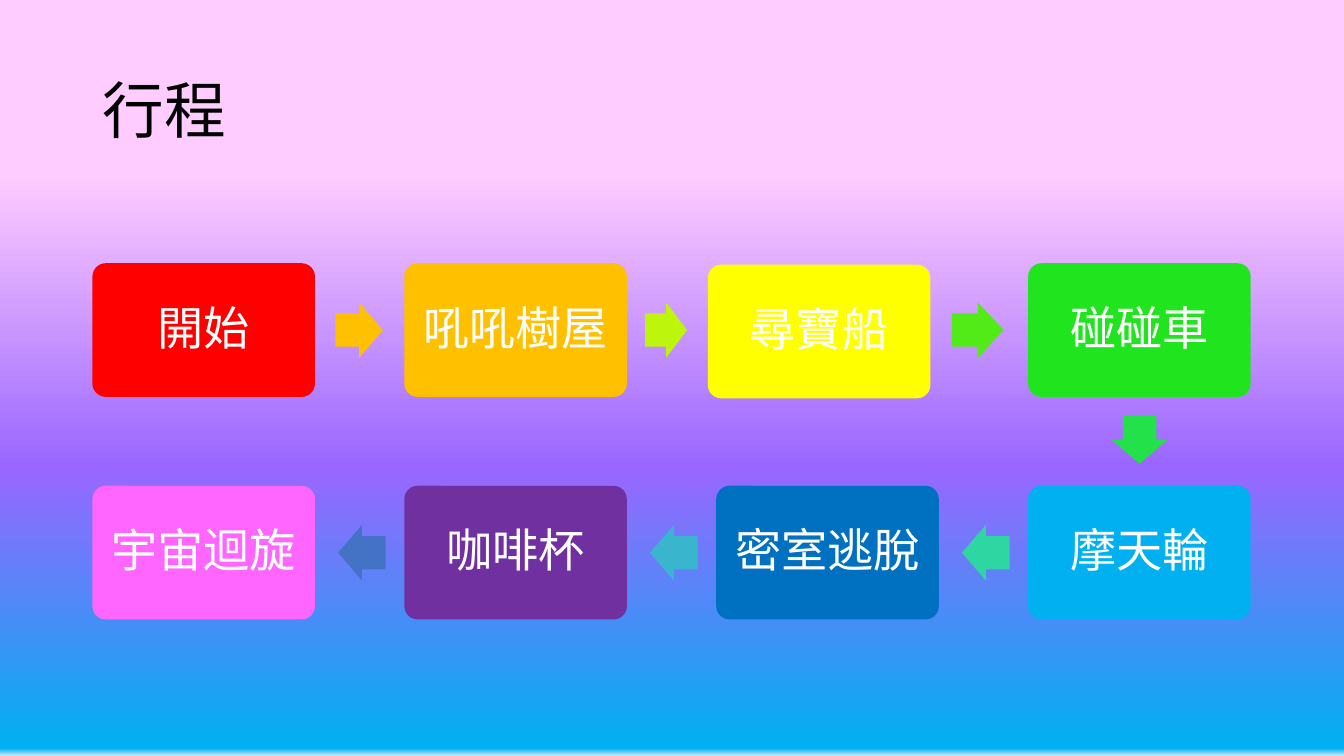
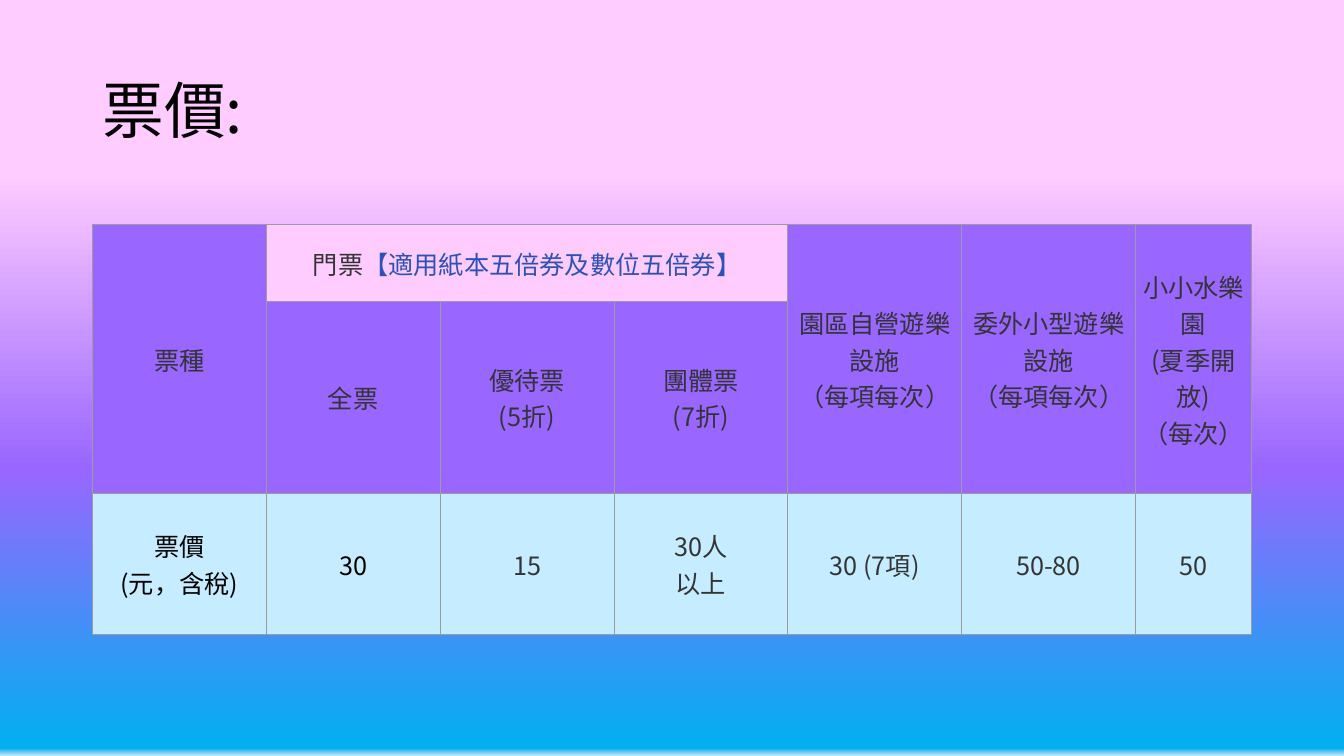
from lxml import etree
from pptx import Presentation
from pptx.dml.color import RGBColor
from pptx.enum.shapes import MSO_SHAPE as SHAPE
from pptx.enum.text import MSO_ANCHOR as ANCHOR, PP_ALIGN as ALIGN
from pptx.oxml.ns import qn
from pptx.util import Pt

FONT = "Noto Sans CJK JP"
BLACK, WHITE, GREY, BLUE = "000000", "FFFFFF", "343434", "2A52BE"
PINK, PURPLE, PALE, BORDER = "FFCCFF", "9966FF", "C5ECFF", "9C9C9C"
BACKDROP = [(23, PINK), (62, PURPLE), (99, "00B0F0"), (100, "D6E6F5")]
LEFT, WIDTH = 66, 828


def rgb(value):
    return RGBColor.from_string(value)


class Deck:
    """Holds the shared style and the current slide."""

    def __init__(self):
        self.prs = Presentation()
        self.prs.slide_width, self.prs.slide_height = Pt(960), Pt(540)
        self.slide = None
        self.backdrop()

    def backdrop(self):
        master = self.prs.slide_master
        fill = master.background.fill
        fill.gradient()
        fill.gradient_angle = 270
        stops = next(master.element.iter(qn("a:gsLst")))
        for gs in list(stops):
            stops.remove(gs)
        for percent, color in BACKDROP:
            gs = etree.SubElement(stops, qn("a:gs"), pos=str(percent * 1000))
            etree.SubElement(gs, qn("a:srgbClr"), val=color)

    def style(self, p, size, color, align=ALIGN.CENTER, spacing=None):
        p.alignment = align
        p.line_spacing = spacing
        for r in p.runs:
            r.font.name, r.font.size, r.font.bold = FONT, Pt(size), False
            r.font.color.rgb = rgb(color)
            etree.SubElement(r.font._element, qn("a:ea"), typeface=FONT)

    def new_slide(self, title):
        self.slide = self.prs.slides.add_slide(self.prs.slide_layouts[5])
        sp = self.slide.shapes.title
        sp.left, sp.top, sp.width, sp.height = Pt(LEFT), Pt(28.75), Pt(WIDTH), Pt(104.4)
        tf = sp.text_frame
        tf.text = title
        tf.vertical_anchor = ANCHOR.MIDDLE
        self.style(tf.paragraphs[0], 44, BLACK, ALIGN.LEFT, 0.9)

    def shape(self, kind, x, y, w, h, color, adjustments):
        sp = self.slide.shapes.add_shape(kind, Pt(x), Pt(y), Pt(w), Pt(h))
        sp.shadow.inherit = False
        sp.fill.solid()
        sp.fill.fore_color.rgb = rgb(color)
        sp.line.fill.background()
        for i, value in enumerate(adjustments):
            sp.adjustments[i] = value
        return sp

    def box(self, text, x, y, w, h, color):
        sp = self.shape(SHAPE.ROUNDED_RECTANGLE, x, y, w, h, color, [0.1])
        tf = sp.text_frame
        tf.text = text
        tf.word_wrap = False
        tf.vertical_anchor = ANCHOR.MIDDLE
        self.style(tf.paragraphs[0], 33, WHITE, spacing=0.9)

    def arrow(self, x, y, w, color, rotation=0):
        sp = self.shape(SHAPE.RIGHT_ARROW, x, y, w, 39.6, color, [0.6, 0.5])
        sp.rotation = rotation

    def table(self, x, y, widths, heights):
        frame = self.slide.shapes.add_table(len(heights), len(widths), Pt(x), Pt(y),
                                            Pt(sum(widths)), Pt(sum(heights)))
        table = frame.table
        table.first_row = table.horz_banding = False
        for column, width in zip(table.columns, widths):
            column.width = Pt(width)
        for row, height in zip(table.rows, heights):
            row.height = Pt(height)
        return table

    def cell(self, cell, text, fill, color):
        cell.text = text
        cell.vertical_anchor = ANCHOR.MIDDLE
        cell.margin_left = cell.margin_right = Pt(2.25)
        cell.margin_top = cell.margin_bottom = Pt(2.25)
        for p in cell.text_frame.paragraphs:
            self.style(p, 18, color)
        # Borders come before the fill in the cell properties
        tcPr = cell._tc.get_or_add_tcPr()
        for side in ("a:lnL", "a:lnR", "a:lnT", "a:lnB"):
            ln = etree.SubElement(tcPr, qn(side), w=str(Pt(0.75)))
            solid = etree.SubElement(ln, qn("a:solidFill"))
            etree.SubElement(solid, qn("a:srgbClr"), val=BORDER)
        cell.fill.solid()
        cell.fill.fore_color.rgb = rgb(fill)


def route_slide(deck):
    deck.new_slide("行程")
    box_w, box_h, pitch = 159, 95.5, 222.8
    top, bottom = 188, 347

    # Stops: the upper row runs right, the lower row runs back left
    stops = [("開始", "FF0000"), ("吼吼樹屋", "FFC000"), ("尋寶船", "FFFF00"),
             ("碰碰車", "20E51E"), ("摩天輪", "00B0F0"), ("密室逃脫", "0070C0"),
             ("咖啡杯", "7030A0"), ("宇宙迴旋", "FF66FF")]
    for i, (name, color) in enumerate(stops):
        x = LEFT + pitch * min(i, 7 - i)
        y = top if i < 4 else bottom
        if name == "尋寶船":
            x, y = x - 6, y + 1
        deck.box(name, x, y, box_w, box_h, color)

    # Arrows between the stops
    for x, w, color in [(239.5, 34, "FFC000"), (460.8, 30, "BEF50C"), (680, 37, "53EB17")]:
        deck.arrow(x, top + 28, w, color)
    deck.arrow(797, 294.5, 34, "23E148", 90)
    for i, color in enumerate(["4472C4", "39B6CE", "2ED7A1"]):
        deck.arrow(241.5 + pitch * i, bottom + 28, 34, color, 180)


def price_slide(deck):
    deck.new_slide("票價:")
    rows = [
        ["票種", "門票", "", "", "園區自營遊樂設施\n（每項每次）",
         "委外小型遊樂設施\n（每項每次）", "小小水樂園\n(夏季開放)\n（每次）"],
        ["", "全票", "優待票\n(5折)", "團體票\n(7折)", "", "", ""],
        ["票價\n(元，含稅)", "30", "15", "30人\n以上", "30 (7項)", "50-80", "50"],
    ]
    table = deck.table(LEFT, 160.5, [124.2] * 6 + [82.8], [55, 137, 101])
    for i, row in enumerate(rows):
        for j, text in enumerate(row):
            admission = i == 0 and 1 <= j <= 3
            fill = PALE if i == 2 else PINK if admission else PURPLE
            color = BLACK if i == 2 and j < 2 else GREY
            deck.cell(table.cell(i, j), text, fill, color)

    # Second colour in the admission heading
    p = table.cell(0, 1).text_frame.paragraphs[0]
    r = p.add_run()
    r.text = "【適用紙本五倍券及數位五倍券】"
    r.font.name, r.font.size, r.font.bold = FONT, Pt(18), False
    r.font.color.rgb = rgb(BLUE)
    etree.SubElement(r.font._element, qn("a:ea"), typeface=FONT)

    # Headings that span cells
    table.cell(0, 1).merge(table.cell(0, 3))
    for j in (0, 4, 5, 6):
        table.cell(0, j).merge(table.cell(1, j))


def main():
    deck = Deck()
    route_slide(deck)
    price_slide(deck)
    deck.prs.save("out.pptx")


if __name__ == "__main__":
    main()
